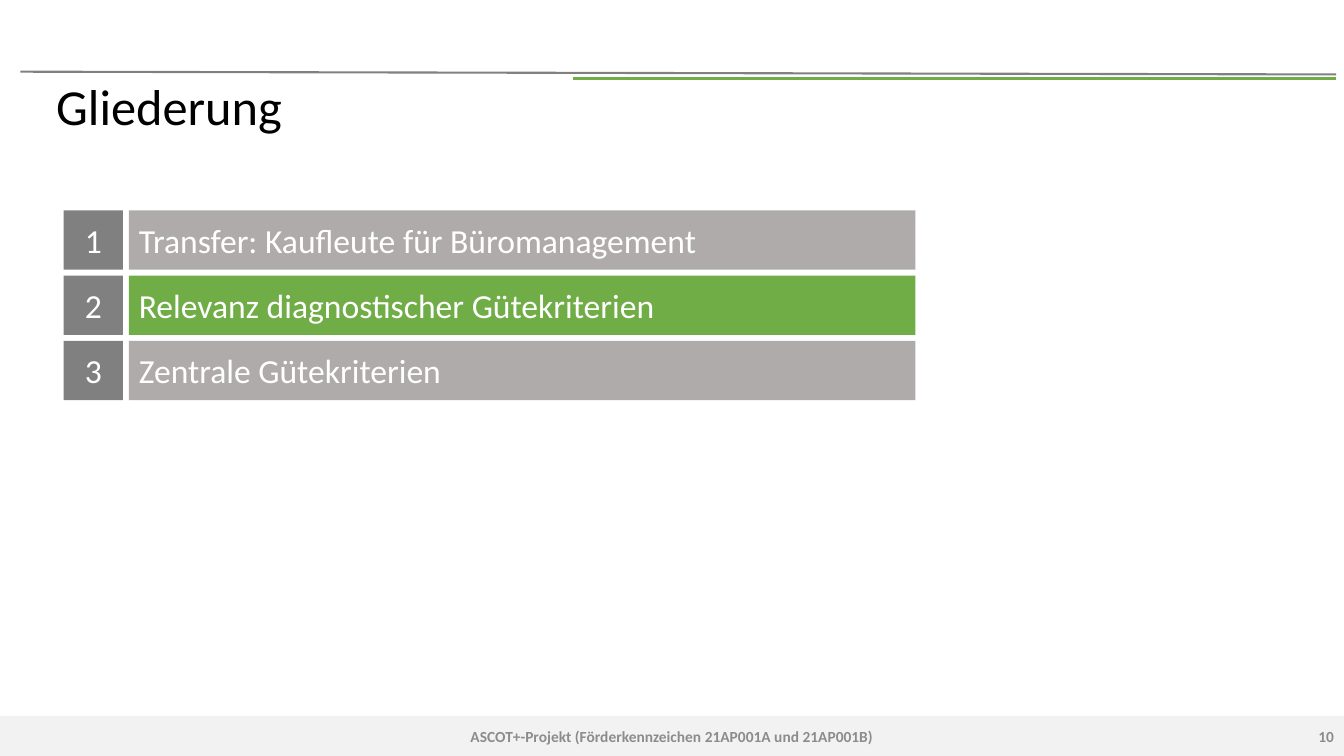
from pptx import Presentation
from pptx.dml.color import RGBColor as RGB
from pptx.enum.shapes import MSO_CONNECTOR as Conn, MSO_SHAPE as Kind
from pptx.enum.text import MSO_ANCHOR as Anchor, PP_ALIGN as Align
from pptx.oxml.ns import qn
from pptx.util import Pt
from lxml.etree import SubElement as sub

HEX = {"text": "000000", "white": "FFFFFF", "grey": "808080", "pale": "AFABAB",
       "green": "70AD47", "foot": "F2F2F2", "note": "8C8C8C"}
FONT = "Calibri"
WIDE, HIGH = 960, 540
TOPICS = ["Transfer: Kaufleute für Büromanagement",
          "Relevanz diagnostischer Gütekriterien",
          "Zentrale Gütekriterien"]
ACTIVE = 2


def color(name):
    return RGB.from_string(HEX[name])


def write(shape, text, size=24, tint="white", bold=False, align=Align.LEFT,
          space=1.0):
    frame = shape.text_frame
    frame.word_wrap = True
    frame.vertical_anchor = Anchor.MIDDLE
    para = frame.paragraphs[0]
    para.alignment = align
    para.line_spacing = space
    run = para.add_run()
    run.text = text
    font = run.font
    font.name, font.size, font.bold = FONT, Pt(size), bold
    font.color.rgb = color(tint)


def label(slide, box, text, **form):
    write(slide.shapes.add_textbox(*map(Pt, box)), text, **form)


def block(slide, box, fill):
    shape = slide.shapes.add_shape(Kind.RECTANGLE, *map(Pt, box))
    shape.shadow.inherit = False
    shape.fill.solid()
    shape.fill.fore_color.rgb = color(fill)
    shape.line.fill.background()
    return shape


def rule(slide, ends, tint, width):
    line = slide.shapes.add_connector(Conn.STRAIGHT, *map(Pt, ends))
    line.line.color.rgb = color(tint)
    line.line.width = Pt(width)
    sub(line._element.spPr, qn("a:effectLst"))


def header(slide, box, title):
    """Draw the two rules along the top of the box and the title below."""
    x, y, w, h = box
    rule(slide, (x, y, x + w, y + 2), "grey", 1.5)
    rule(slide, (x + 395, y + 5, x + w, y + 5), "green", 2.25)
    label(slide, (x + 18.5, y + 5.7, 878.4, h - 5.7), title, size=36,
          tint="text", space=0.9)


def agenda(slide, box, topics, active):
    """Stack numbered bars in the box, with the active one in green."""
    x, y, w, h = box
    gap = 4.2
    side = (h - gap * (len(topics) - 1)) / len(topics)
    for num, topic in enumerate(topics, 1):
        top = y + (num - 1) * (side + gap)
        write(block(slide, (x, top, side, side), "grey"), str(num),
              align=Align.CENTER)
        left = side + gap
        fill = "green" if num == active else "pale"
        write(block(slide, (x + left, top, w - left, side), fill), topic)


def footer(slide, box, note, page):
    x, y, w, h = box
    block(slide, box, "foot")
    form = dict(size=11, tint="note", bold=True)
    label(slide, (x + 318, y, 324, h), note, align=Align.CENTER, **form)
    label(slide, (x + w - 216, y, 216, h), page, align=Align.RIGHT, **form)


def main():
    deck = Presentation()
    deck.slide_width, deck.slide_height = Pt(WIDE), Pt(HIGH)
    slide = deck.slides.add_slide(deck.slide_layouts[6])
    footer(slide, (0, 511.4, WIDE, 28.6),
           "ASCOT+-Projekt (Förderkennzeichen 21AP001A und 21AP001B)", "10")
    header(slide, (14.6, 51.2, 939.8, 48.2), "Gliederung")
    agenda(slide, (45.5, 150.3, 608.4, 135.6), TOPICS, ACTIVE)
    deck.save("out.pptx")


if __name__ == "__main__":
    main()
